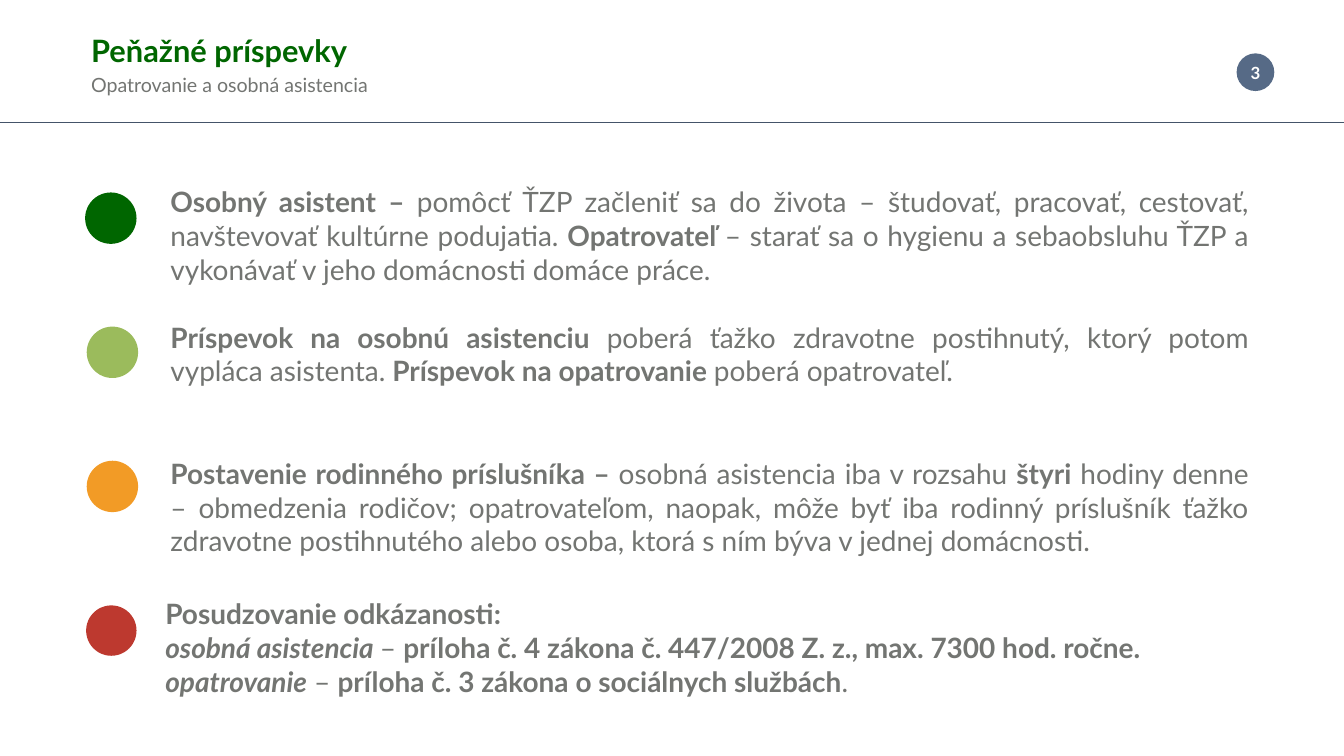
from lxml import etree
from pptx import Presentation
from pptx import util as u
from pptx.dml.color import RGBColor
from pptx.enum import shapes, text
from pptx.oxml.ns import qn

Cm = u.Cm
GREEN, GREY, WHITE = "006600", "737572", "FFFFFF"
WIDE, NARROW = (0.51, 0.25), (0.25, 0.13)  # horizontal and vertical insets
JUSTIFY, CENTER, LEFT = (text.PP_ALIGN.JUSTIFY, text.PP_ALIGN.CENTER,
                         text.PP_ALIGN.LEFT)

# Each run is (text, style), where style holds b for bold and i for italic.
# Topic: dot colour, dot left, dot diameter, dot drop, box top, box height,
# insets, paragraphs.
TOPICS = [
    (GREEN, 4.29, 2.59, 0.63, 9.07, 5.64, WIDE, [[
        ("Osobný asistent – ", "b"),
        ("pomôcť ŤZP začleniť sa do života – študovať, pracovať, cestovať, "
         "navštevovať kultúrne podujatia. ", ""),
        ("Opatrovateľ", "b"),
        (" – starať sa o hygienu a sebaobsluhu ŤZP a vykonávať v jeho "
         "domácnosti domáce práce. ", "")]]),
    ("9BBB5C", 4.37, 2.59, 0.58, 15.88, 3.94, WIDE, [[
        ("Príspevok na osobnú asistenciu ", "b"),
        ("poberá ťažko zdravotne postihnutý, ktorý potom vypláca asistenta.", ""),
        (" Príspevok na opatrovanie ", "b"),
        ("poberá opatrovateľ. ", "")]]),
    ("F29B26", 4.37, 2.59, 0.46, 22.76, 5.64, WIDE, [[
        ("Postavenie rodinného príslušníka – ", "b"),
        ("osobná asistencia iba v rozsahu ", ""),
        ("štyri", "b"),
        (" hodiny denne – obmedzenia rodičov; opatrovateľom, naopak, môže byť "
         "iba rodinný príslušník ťažko zdravotne postihnutého alebo osoba, "
         "ktorá s ním býva v jednej domácnosti. ", "")]]),
    ("BD392F", 4.34, 2.54, 0.56, 29.95, 5.38, NARROW, [
        [("Posudzovanie odkázanosti:", "b")],
        [("osobná asistencia ", "bi"), ("– ", ""),
         ("príloha č. 4 zákona č. 447/2008 Z. z., max. 7300 hod. ročne. ", "b")],
        [("opatrovanie", "bi"), (" – ", ""),
         ("príloha č. 3 zákona o sociálnych službách", "b"), (". ", "")]]),
]


def rgb(value):
    return RGBColor.from_string(value)


def set_all(obj, values):
    for name, value in values.items():
        setattr(obj, name, value)


def set_frame(tf, insets=NARROW, wrap=True):
    side, top = (Cm(v) for v in insets)
    set_all(tf, dict(margin_left=side, margin_right=side, margin_top=top,
                     margin_bottom=top, word_wrap=wrap,
                     auto_size=text.MSO_AUTO_SIZE.NONE,
                     vertical_anchor=text.MSO_ANCHOR.TOP))


def add_paragraph(tf, index, runs, size, color, **layout):
    p = tf.paragraphs[0] if index == 0 else tf.add_paragraph()
    set_all(p, layout)
    for words, style in runs:
        r = p.add_run()
        r.text = words
        set_all(r.font, dict(name="Lato", size=u.Pt(size),
                             bold="b" in style, italic="i" in style))
        r.font.color.rgb = rgb(color)


def add_dot(s, left, top, diameter, color):
    sp = s.shapes.add_shape(shapes.MSO_SHAPE.OVAL, Cm(left), Cm(top),
                            Cm(diameter), Cm(diameter))
    sp.shadow.inherit = False
    sp.fill.solid()
    sp.fill.fore_color.rgb = rgb(color)
    sp.line.fill.background()


def add_header(s, left, top, width, height):
    sp = s.shapes.title
    set_all(sp, dict(left=Cm(left), top=Cm(top), width=Cm(width),
                     height=Cm(height)))
    set_frame(sp.text_frame)
    lines = [("Peňažné príspevky", "b", 44, GREEN),
             ("Opatrovanie a osobná asistencia", "", 28, GREY)]
    for i, (words, style, size, color) in enumerate(lines):
        add_paragraph(sp.text_frame, i, [(words, style)], size, color,
                      alignment=LEFT, line_spacing=1.2)


def add_page_number(s, left, top, diameter, number):
    add_dot(s, left, top, diameter, "566A86")
    sp = s.shapes.add_textbox(Cm(left - 0.08), Cm(top + 0.21),
                              Cm(diameter + 0.16), Cm(1.55))
    set_frame(sp.text_frame, WIDE, wrap=False)
    add_paragraph(sp.text_frame, 0, [(number, "b")], 24, WHITE,
                  alignment=CENTER)


def add_rule(s, top, width):
    line = s.shapes.add_connector(shapes.MSO_CONNECTOR.STRAIGHT,
                                  0, Cm(top), width, Cm(top))
    line.line.color.rgb = rgb("445469")
    line.line.width = u.Pt(1)
    etree.SubElement(line._element.spPr, qn("a:effectLst"))


def add_topic(s, left, width, topic):
    color, dot_left, diameter, drop, top, height, insets, paragraphs = topic
    add_dot(s, dot_left, top + drop, diameter, color)
    sp = s.shapes.add_textbox(Cm(left), Cm(top), Cm(width), Cm(height))
    set_frame(sp.text_frame, insets)
    for i, runs in enumerate(paragraphs):
        add_paragraph(sp.text_frame, i, runs, 40, GREY, alignment=JUSTIFY)


def main():
    prs = Presentation()
    set_all(prs, dict(slide_width=Cm(67.72), slide_height=Cm(38.1)))
    s = prs.slides.add_slide(prs.slide_layouts[5])
    add_header(s, 4.34, 1.09, 34.34, 3.96)
    add_page_number(s, 62.31, 2.69, 1.9, "3")
    add_rule(s, 6.15, prs.slide_width)
    for topic in TOPICS:
        add_topic(s, 8.08, 55.35, topic)
    prs.save("out.pptx")


if __name__ == "__main__":
    main()
